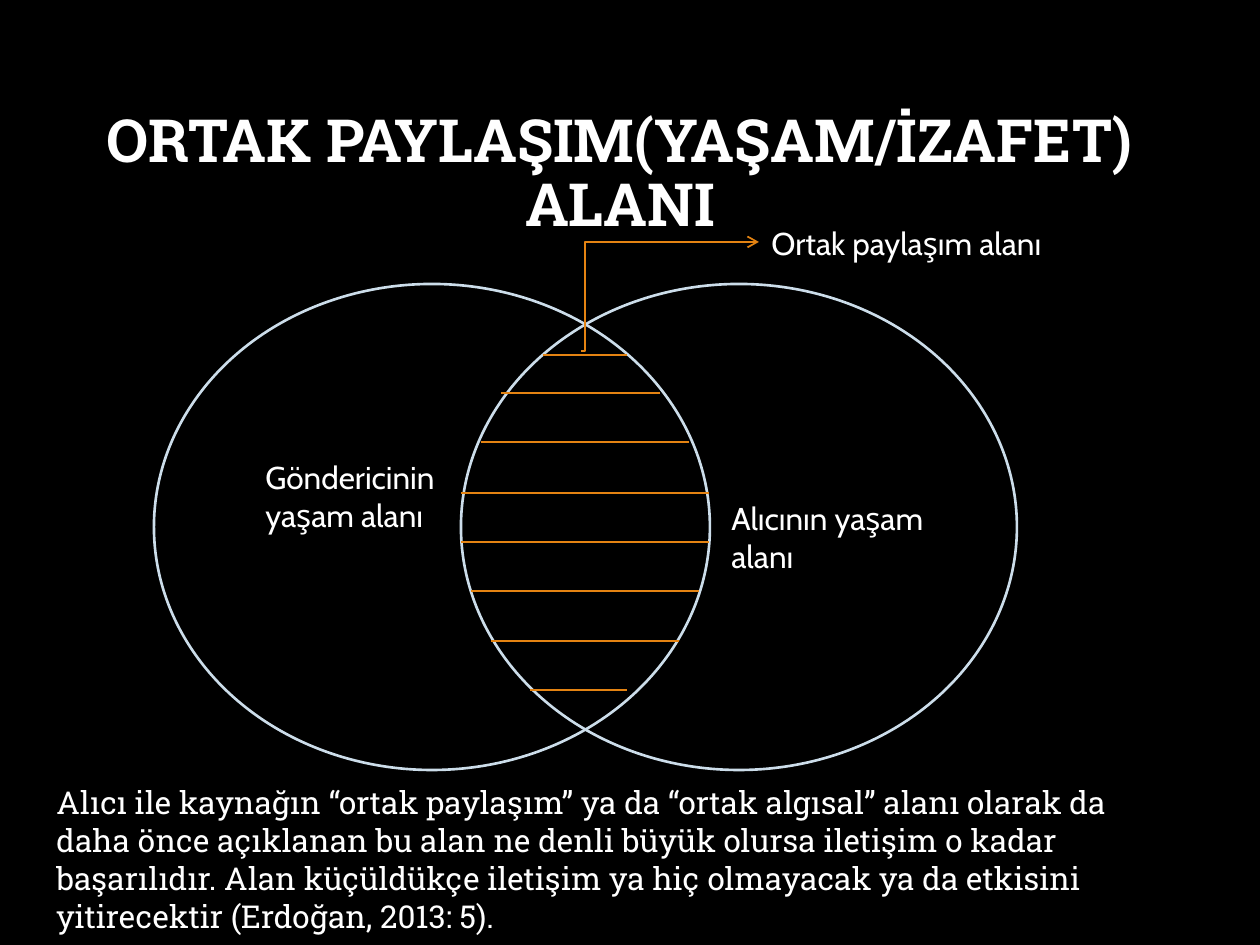
"""Build a slide showing the shared field of sender and receiver as two overlapping ellipses."""
from lxml import etree
from pptx import Presentation
from pptx import util as u
from pptx.dml.color import RGBColor
from pptx.enum import shapes, text
from pptx.oxml.ns import qn

WHITE = RGBColor(0xFF, 0xFF, 0xFF)
BLACK = RGBColor(0x00, 0x00, 0x00)
PALE_BLUE = RGBColor(0xCC, 0xDD, 0xEA)
ORANGE = RGBColor(0xE4, 0x83, 0x12)
HEADING_FONT, LABEL_FONT = "Roboto Slab", "Cabin"

TITLE = "ORTAK PAYLAŞIM(YAŞAM/İZAFET) ALANI"
TITLE_BOX = (14, 84, 1212, 183)
FIELDS = [(154, 284, 556, 486), (461, 284, 556, 486)]
HATCHES = [
    (543, 627, 355), (501, 660, 393), (481, 689, 442), (461, 709, 493),
    (461, 709, 542), (471, 699, 591), (491, 679, 641), (530, 627, 690),
]
POINTER = (581, 351, 759, 242)
POINTER_BEND = 2200
TEXTS = [
    ("Göndericinin yaşam alanı", LABEL_FONT, (253, 452, 208, 89)),
    ("Alıcının yaşam alanı", LABEL_FONT, (719, 493, 258, 89)),
    ("Ortak paylaşım alanı", LABEL_FONT, (759, 218, 307, 50)),
    ("Alıcı ile kaynağın “ortak paylaşım” ya da “ortak algısal” alanı olarak da "
     "daha önce açıklanan bu alan ne denli büyük olursa iletişim o kadar başarılıdır. "
     "Alan küçüldükçe iletişim ya hiç olmayacak ya da etkisini yitirecektir "
     "(Erdoğan, 2013: 5).", HEADING_FONT, (44, 777, 1150, 165)),
]


def emu(*lengths):
    return [u.Emu(round(length * 914400 / 126)) for length in lengths]


def add_run(paragraph, content, font_name, size, bold=False):
    run = paragraph.add_run()
    run.text = content
    run.font.name = font_name
    run.font.size = u.Pt(size)
    run.font.bold = bold
    run.font.color.rgb = WHITE


def add_line(slide, kind, ends):
    connector = slide.shapes.add_connector(kind, *emu(*ends))
    connector.line.color.rgb = ORANGE
    connector.line.width = u.Pt(1)
    etree.SubElement(connector._element.spPr, qn("a:effectLst"))
    return connector


def add_title(slide):
    title = slide.shapes.title
    title.left, title.top, title.width, title.height = emu(*TITLE_BOX)
    title.text_frame.vertical_anchor = text.MSO_ANCHOR.MIDDLE
    title.text_frame.word_wrap = True
    paragraph = title.text_frame.paragraphs[0]
    paragraph.alignment = text.PP_ALIGN.CENTER
    paragraph.line_spacing = 0.9
    add_run(paragraph, TITLE, HEADING_FONT, 34, bold=True)


def add_field(slide, box):
    ellipse = slide.shapes.add_shape(shapes.MSO_SHAPE.OVAL, *emu(*box))
    ellipse.shadow.inherit = False
    ellipse.fill.background()
    ellipse.line.color.rgb = PALE_BLUE
    ellipse.line.width = u.Pt(1.5)


def add_pointer(slide):
    pointer = add_line(slide, shapes.MSO_CONNECTOR.ELBOW, POINTER)
    properties = pointer._element.spPr
    guides = properties.find(qn("a:prstGeom")).find(qn("a:avLst"))
    etree.SubElement(guides, qn("a:gd"), name="adj1", fmla=f"val {POINTER_BEND}")
    etree.SubElement(properties.find(qn("a:ln")), qn("a:tailEnd"), type="arrow")


def add_text(slide, content, font_name, box):
    frame = slide.shapes.add_textbox(*emu(*box)).text_frame
    frame.word_wrap = True
    frame.auto_size = text.MSO_AUTO_SIZE.SHAPE_TO_FIT_TEXT
    add_run(frame.paragraphs[0], content, font_name, 18)


def main():
    presentation = Presentation()
    presentation.slide_width, presentation.slide_height = emu(1260, 945)
    slide = presentation.slides.add_slide(presentation.slide_layouts[5])
    slide.background.fill.solid()
    slide.background.fill.fore_color.rgb = BLACK
    add_title(slide)
    for box in FIELDS:
        add_field(slide, box)
    for left, right, y in HATCHES:
        add_line(slide, shapes.MSO_CONNECTOR.STRAIGHT, (left, y, right, y))
    add_pointer(slide)
    for content, font_name, box in TEXTS:
        add_text(slide, content, font_name, box)
    presentation.save("out.pptx")


if __name__ == "__main__":
    main()
